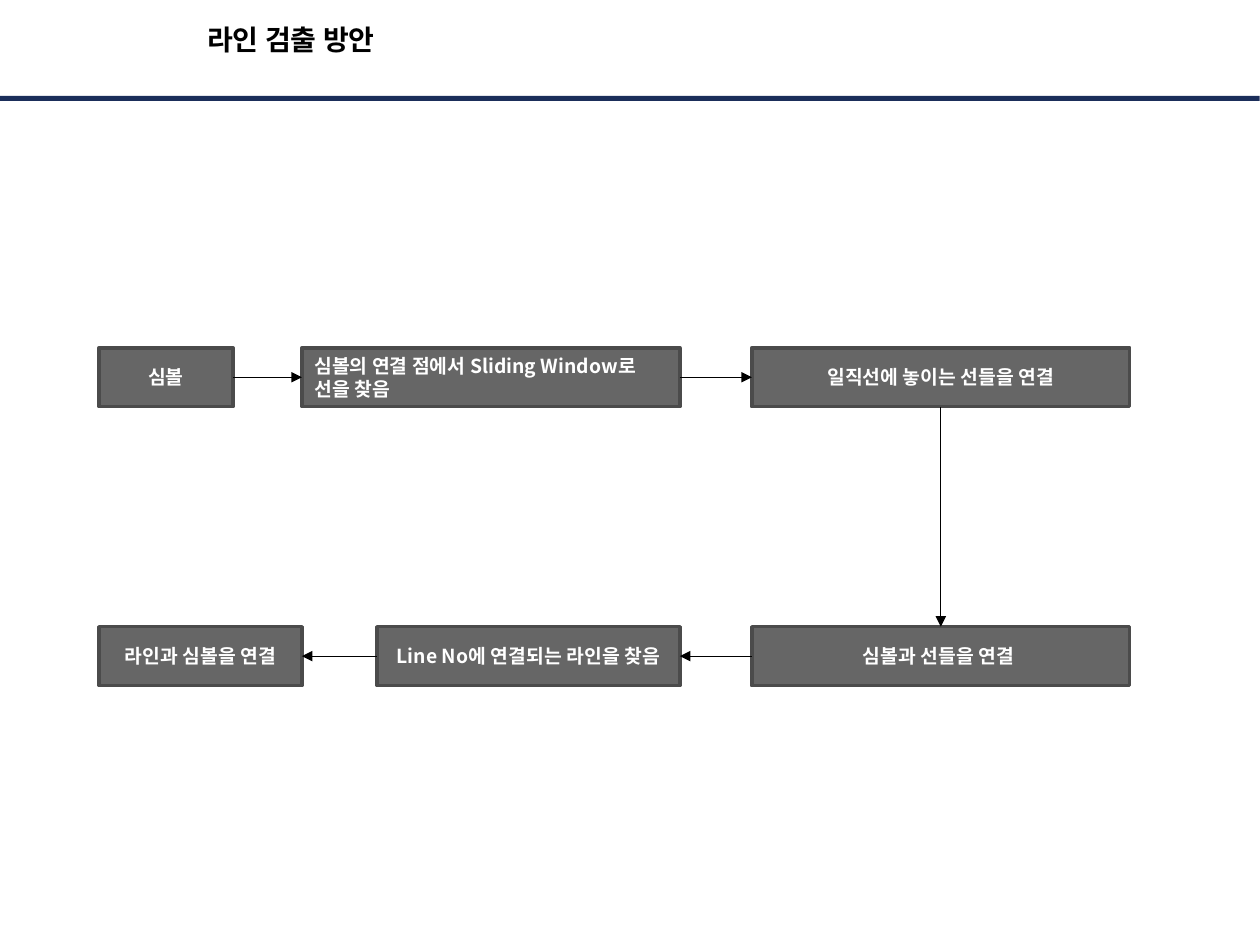
"""Build the line detection flow slide."""
from dataclasses import dataclass

from lxml.etree import SubElement
from pptx import Presentation
from pptx.dml.color import RGBColor
from pptx.enum.shapes import MSO_CONNECTOR, MSO_SHAPE
from pptx.enum.text import MSO_ANCHOR, PP_ALIGN
from pptx.oxml.ns import qn
from pptx.util import Emu, Inches, Pt

PIXELS_PER_INCH = 126.4
TOP, LEFT, BOTTOM, RIGHT = range(4)


@dataclass(frozen=True)
class Theme:
    """Colours, fonts and type sizes of the slide."""
    ink: str = "000000"
    bar: str = "1B2E5A"
    box: str = "666666"
    edge: str = "4B4B4B"
    box_text: str = "FFFFFF"
    title_font: str = "Arial"
    korean_font: str = "Noto Sans CJK KR"
    title_size: int = 16
    box_size: int = 11
    edge_width: float = 2
    arrow_width: float = 0.75


def px(length):
    """Turn whole pixels into EMU."""
    return Emu(round(length * 914400 / PIXELS_PER_INCH))


def write_text(shape, text, *, size, color, font, korean_font,
               align=PP_ALIGN.CENTER, anchor=MSO_ANCHOR.MIDDLE):
    """Write one bold formatted paragraph into a shape."""
    frame = shape.text_frame
    frame.word_wrap = True
    frame.vertical_anchor = anchor
    paragraph = frame.paragraphs[0]
    paragraph.text = text
    paragraph.alignment = align
    for run in paragraph.runs:
        run.font.size = Pt(size)
        run.font.bold = True
        run.font.name = font
        run.font.color.rgb = RGBColor.from_string(color)
        run.font._element.set("kern", "1200")
        SubElement(run.font._element, qn("a:ea"), typeface=korean_font)


class FlowSlide:
    """Hold the theme and the current slide."""

    def __init__(self, slide, theme):
        """Keep the slide and its theme."""
        self.slide = slide
        self.theme = theme

    def title(self, text, left, top, width, height):
        """Place and format the title placeholder."""
        shape = self.slide.shapes.title
        shape.left, shape.top = px(left), px(top)
        shape.width, shape.height = px(width), px(height)
        write_text(shape, text, size=self.theme.title_size,
                   color=self.theme.ink, font=self.theme.title_font,
                   korean_font=self.theme.korean_font, anchor=MSO_ANCHOR.TOP)

    def rectangle(self, left, top, width, height, fill):
        """Add a plain filled rectangle."""
        shape = self.slide.shapes.add_shape(
            MSO_SHAPE.RECTANGLE, px(left), px(top), px(width), px(height))
        shape.shadow.inherit = False
        shape.fill.solid()
        shape.fill.fore_color.rgb = RGBColor.from_string(fill)
        shape.line.fill.background()
        return shape

    def box(self, text, left, top, width, height, align=PP_ALIGN.CENTER):
        """Add a labelled step of the flow."""
        shape = self.rectangle(left, top, width, height, self.theme.box)
        shape.line.color.rgb = RGBColor.from_string(self.theme.edge)
        shape.line.width = Pt(self.theme.edge_width)
        write_text(shape, text, size=self.theme.box_size,
                   color=self.theme.box_text, font=self.theme.korean_font,
                   korean_font=self.theme.korean_font, align=align)
        return shape

    def arrow(self, source, source_side, target, target_side):
        """Join two steps with an arrow."""
        connector = self.slide.shapes.add_connector(
            MSO_CONNECTOR.STRAIGHT, 0, 0, 0, 0)
        connector.begin_connect(source, source_side)
        connector.end_connect(target, target_side)
        connector.line.color.rgb = RGBColor.from_string(self.theme.ink)
        connector.line.width = Pt(self.theme.arrow_width)
        SubElement(connector.line._get_or_add_ln(), qn("a:tailEnd"),
                   type="triangle")
        SubElement(connector._element.spPr, qn("a:effectLst"))


def main():
    """Build and save the presentation."""
    presentation = Presentation()
    presentation.slide_width = Inches(9.97)
    presentation.slide_height = Inches(7.48)
    slide = presentation.slides.add_slide(presentation.slide_layouts[5])
    theme = Theme()
    flow = FlowSlide(slide, theme)

    flow.rectangle(0, 96, 1260, 5, theme.bar)
    flow.title("라인 검출 방안", 16, 16, 550, 59)

    upper, lower, height = 348, 627, 59
    symbol = flow.box("심볼", 99, upper, 134, height)
    search = flow.box("심볼의 연결 점에서 Sliding Window로\n선을 찾음",
                      302, upper, 378, height, align=PP_ALIGN.LEFT)
    straight = flow.box("일직선에 놓이는 선들을 연결", 752, upper, 378, height)
    attach = flow.box("심볼과 선들을 연결 ", 752, lower, 378, height)
    line_number = flow.box("Line No에 연결되는 라인을 찾음",
                           377, lower, 303, height)
    result = flow.box("라인과 심볼을 연결", 99, lower, 203, height)

    flow.arrow(symbol, RIGHT, search, LEFT)
    flow.arrow(search, RIGHT, straight, LEFT)
    flow.arrow(straight, BOTTOM, attach, TOP)
    flow.arrow(attach, LEFT, line_number, RIGHT)
    flow.arrow(line_number, LEFT, result, RIGHT)

    presentation.save("out.pptx")


if __name__ == "__main__":
    main()
